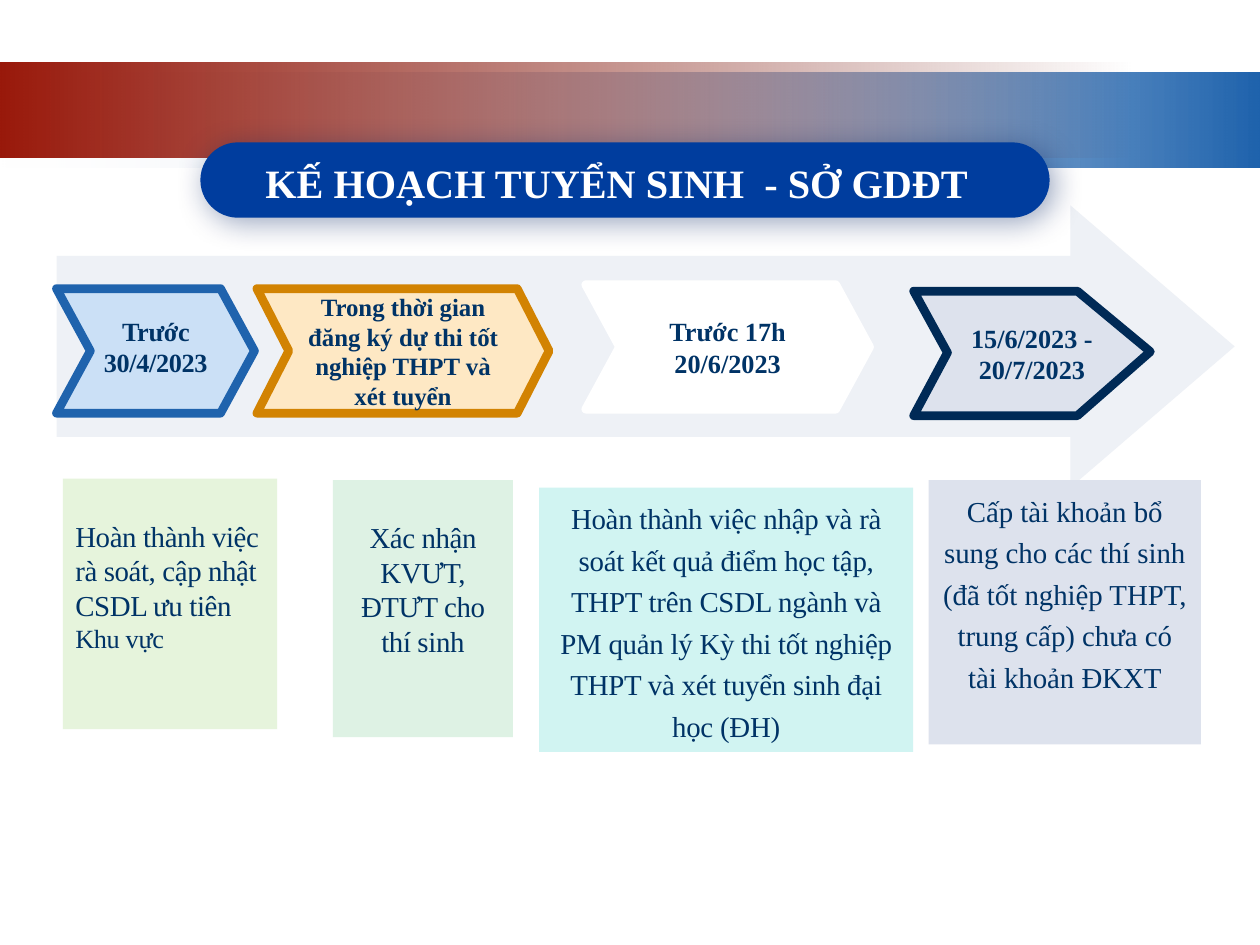
from pptx import Presentation
from pptx.dml.color import RGBColor
from pptx.enum.shapes import MSO_SHAPE
from pptx.enum.text import MSO_ANCHOR, MSO_AUTO_SIZE, PP_ALIGN
from pptx.oxml.ns import qn
from pptx.util import Cm, Pt
from lxml.etree import SubElement

FONT = "Times New Roman"
NAVY = "003366"


def color(value):
    return RGBColor.from_string(value)


def place(sp, left, top, width, height):
    sp.left, sp.top, sp.width, sp.height = Cm(left), Cm(top), Cm(width), Cm(height)


def paint(sp, fill, line=None, weight=5):
    sp.shadow.inherit = False
    sp.fill.solid()
    sp.fill.fore_color.rgb = color(fill)
    if line is None:
        sp.line.fill.background()
        return
    sp.line.color.rgb = color(line)
    sp.line.width = Pt(weight)
    SubElement(sp.line._get_or_add_ln(), qn("a:round"))


def add_box(s, kind, box, fill, line=None, adj=(), weight=5):
    sp = s.shapes.add_shape(kind, *map(Cm, box))
    for i, value in enumerate(adj):
        sp.adjustments[i] = value
    paint(sp, fill, line, weight)
    return sp


def add_band(s, box, stops):
    """Rectangle with a horizontal gradient; stops are (colour, opaque)."""
    sp = add_box(s, MSO_SHAPE.RECTANGLE, box, "FFFFFF")
    sp.fill.gradient()
    sp.fill.gradient_angle = 0
    for stop, (value, opaque) in zip(sp.fill.gradient_stops, stops):
        stop.color.rgb = color(value)
        if not opaque:
            clr = stop._gs.find(qn("a:srgbClr"))
            SubElement(clr, qn("a:alpha"), val="0")


def add_shadow(sp, value):
    effects = sp._element.spPr.find(qn("a:effectLst"))
    shadow = SubElement(effects, qn("a:outerShdw"), blurRad=str(Pt(17)),
                        dist=str(Pt(3)), dir="2700000", rotWithShape="0")
    clr = SubElement(shadow, qn("a:srgbClr"), val=value)
    SubElement(clr, qn("a:alpha"), val="40000")


def write(sp, runs, bold=False, value=NAVY, spacing=0, align=PP_ALIGN.CENTER,
          anchor=MSO_ANCHOR.MIDDLE, line_spacing=1.0, top=0.13):
    """Fill a shape with one paragraph of (text, size) runs."""
    tf = sp.text_frame
    tf.word_wrap = True
    tf.auto_size = MSO_AUTO_SIZE.NONE
    tf.vertical_anchor = anchor
    tf.margin_top = Cm(top)
    p = tf.paragraphs[0]
    p.alignment = align
    p.line_spacing = line_spacing
    for text, size in runs:
        r = p.add_run()
        r.text = text
        r.font.name = FONT
        r.font.size = Pt(size)
        r.font.bold = bold
        r.font.color.rgb = color(value)
        if spacing:
            r.font._element.set("spc", str(spacing))


def add_title(s):
    pill = add_box(s, MSO_SHAPE.ROUNDED_RECTANGLE, (4.04, 2.87, 17.12, 1.52),
                   "003D9E", adj=[0.5])
    add_shadow(pill, "002060")
    title = s.shapes.title
    place(title, 3.68, 3.05, 17.53, 1.24)
    write(title, [("KẾ HOẠCH TUYỂN SINH  - SỞ GDĐT", 23)], bold=True, value="FFFFFF")
    s.shapes._spTree.append(title._element)  # bring in front of the pill


def add_last_step(s):
    left, top, bottom, shoulder = 18.42, 5.87, 8.38, 21.72
    builder = s.shapes.build_freeform(Cm(left), Cm(top), scale=1.0)
    points = [(shoulder, top), (23.19, 7.09), (shoulder, bottom),
              (left, bottom), (19.1, 7.11)]
    builder.add_line_segments([(Cm(x), Cm(y)) for x, y in points], close=True)
    sp = builder.convert_to_shape()
    paint(sp, "DDE2ED", "002A56")
    write(sp, [("15/6/2023 - 20/7/2023", 15)], bold=True)


def add_timeline(s):
    add_box(s, MSO_SHAPE.RIGHT_ARROW, (1.14, 4.14, 23.75, 5.69), "EEF1F6",
            adj=[0.641, 0.582])
    # left, top, width, notch, fill, line, text, size
    steps = [
        (1.14, 5.82, 3.99, 0.272, "CBE0F6", "1F63AD", None, 0),
        (5.18, 5.82, 5.89, 0.256, "FEE8C4", "D28302",
         "Trong thời gian đăng ký dự thi tốt nghiệp THPT và xét tuyển", 14.2),
        (11.81, 5.74, 5.72, 0.272, "FFFFFF", "FFFFFF", "Trước 17h 20/6/2023", 15),
    ]
    for left, top, width, notch, fill, line, text, size in steps:
        sp = add_box(s, MSO_SHAPE.CHEVRON, (left, top, width, 2.51), fill, line, [notch])
        if text:
            write(sp, [(text, size)], bold=True)
    add_last_step(s)
    # The first chevron is too narrow for its date, which has its own box
    date = s.shapes.add_textbox(Cm(1.73), Cm(6.22), Cm(2.82), Cm(1.55))
    write(date, [("Trước 30/4/2023", 15)], bold=True, spacing=-20,
          anchor=MSO_ANCHOR.TOP)


def add_tasks(s):
    # box, fill, runs, text options
    lower = {"top": 0.8, "spacing": -20}
    tasks = [
        ((1.27, 9.65, 4.32, 5.05), "E6F4DC",
         [("Hoàn thành việc rà soát, cập nhật CSDL ưu tiên ", 16.5), ("Khu vực", 15)],
         {"align": PP_ALIGN.LEFT, **lower}),
        ((6.71, 9.68, 3.63, 5.18), "DEF2E4",
         [("Xác nhận KVƯT, ĐTƯT cho thí sinh", 16.5)], lower),
        ((10.87, 9.83, 7.54, 5.33), "D1F4F2",
         [("Hoàn thành việc nhập và rà soát kết quả điểm học tập, THPT trên CSDL "
           "ngành và PM quản lý Kỳ thi tốt nghiệp THPT và xét tuyển sinh đại học (ĐH)",
           16.5)], {"line_spacing": 1.2, "spacing": -10}),
        ((18.72, 9.68, 5.49, 5.33), "DDE2ED",
         [("Cấp tài khoản bổ sung cho các thí sinh (đã tốt nghiệp THPT, trung cấp) "
           "chưa có tài khoản ĐKXT", 16.5)], {"line_spacing": 1.2}),
    ]
    for box, fill, runs, options in tasks:
        sp = add_box(s, MSO_SHAPE.RECTANGLE, box, fill)
        write(sp, runs, anchor=MSO_ANCHOR.TOP, **options)


def main():
    prs = Presentation()
    prs.slide_width, prs.slide_height = Cm(25.4), Cm(19.05)
    s = prs.slides.add_slide(prs.slide_layouts[5])

    # Header bands
    add_band(s, (0, 1.47, 25.4, 1.91), [("F1F2F7", False), ("1F63AD", True)])
    add_band(s, (0, 1.27, 22.86, 1.91), [("99190B", True), ("6D1208", False)])

    add_timeline(s)
    add_title(s)
    add_tasks(s)
    prs.save("out.pptx")


if __name__ == "__main__":
    main()
